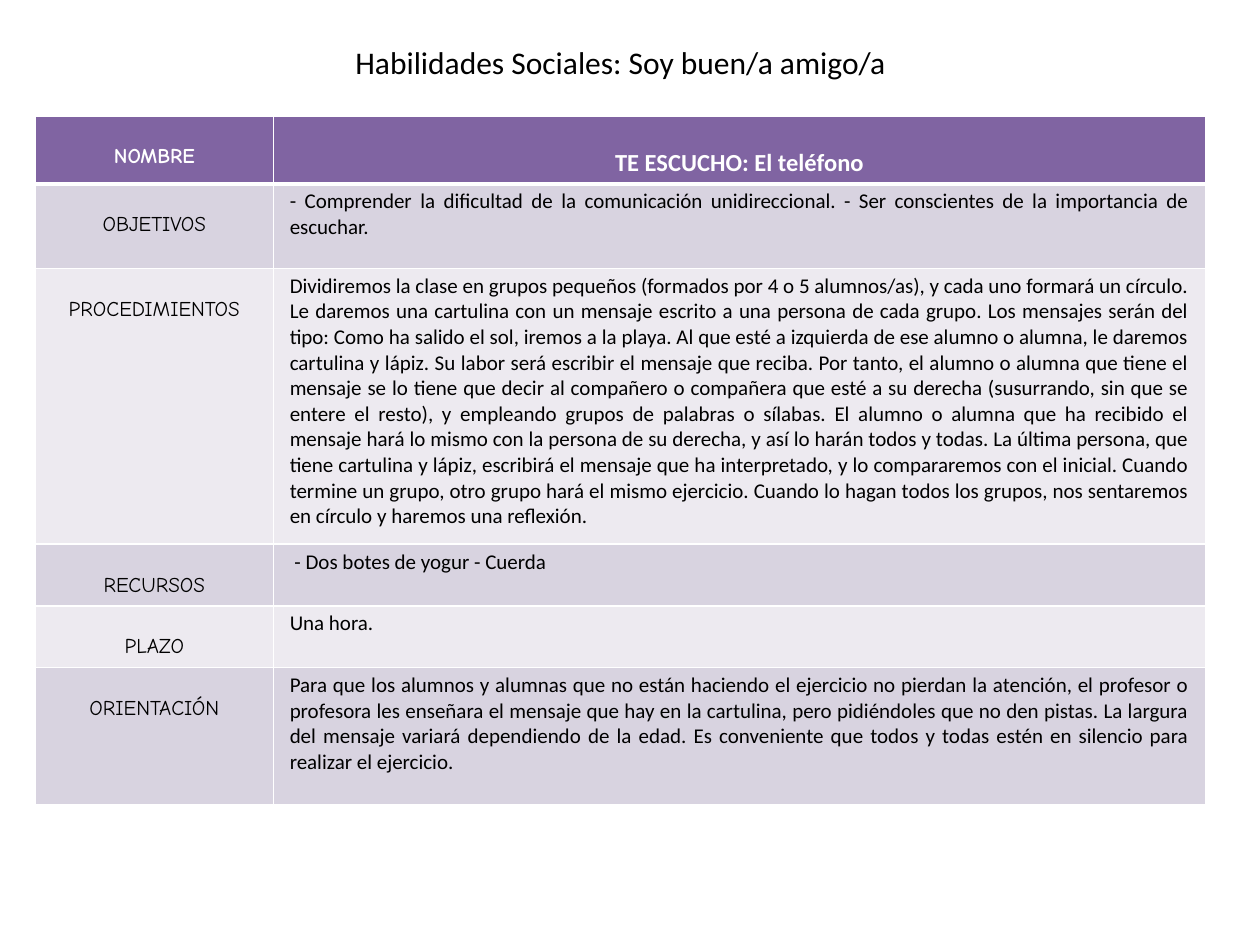
from lxml import etree
from pptx import Presentation
from pptx import util as u
from pptx.dml.color import RGBColor
from pptx.enum import text
from pptx.oxml import ns

COLORS = {"header": "8064A2", "odd": "D8D3E0", "even": "EDEAF0",
          "white": "FFFFFF", "black": "000000"}

COLUMN_WIDTHS = (1.89, 7.4)
ROW_HEIGHTS = (0.54, 0.67, 2.19, 0.49, 0.49, 1.09)

# Steps of the procedure, joined into one paragraph
PROCEDURE_STEPS = [
    "Dividiremos la clase en grupos pequeños (formados por 4 o 5 alumnos/as), "
    "y cada uno formará un círculo.",
    "Le daremos una cartulina con un mensaje escrito a una persona de cada grupo.",
    "Los mensajes serán del tipo: Como ha salido el sol, iremos a la playa.",
    "Al que esté a izquierda de ese alumno o alumna, le daremos cartulina y lápiz.",
    "Su labor será escribir el mensaje que reciba.",
    "Por tanto, el alumno o alumna que tiene el mensaje se lo tiene que decir al "
    "compañero o compañera que esté a su derecha (susurrando, sin que se entere el "
    "resto), y empleando grupos de palabras o sílabas.",
    "El alumno o alumna que ha recibido el mensaje hará lo mismo con la persona de "
    "su derecha, y así lo harán todos y todas.",
    "La última persona, que tiene cartulina y lápiz, escribirá el mensaje que ha "
    "interpretado, y lo compararemos con el inicial.",
    "Cuando termine un grupo, otro grupo hará el mismo ejercicio.",
    "Cuando lo hagan todos los grupos, nos sentaremos en círculo y haremos una "
    "reflexión.",
]

ACTIVITY = [
    ("NOMBRE", "TE ESCUCHO: El teléfono"),
    ("OBJETIVOS",
     "- Comprender la dificultad de la comunicación unidireccional. "
     "- Ser conscientes de la importancia de escuchar."),
    ("PROCEDIMIENTOS", " ".join(PROCEDURE_STEPS)),
    ("RECURSOS", " - Dos botes de yogur - Cuerda"),
    ("PLAZO", "Una hora."),
    ("ORIENTACIÓN",
     "Para que los alumnos y alumnas que no están haciendo el ejercicio no pierdan "
     "la atención, el profesor o profesora les enseñara el mensaje que hay en la "
     "cartulina, pero pidiéndoles que no den pistas. La largura del mensaje variará "
     "dependiendo de la edad. Es conveniente que todos y todas estén en silencio "
     "para realizar el ejercicio."),
]

# Text formats: font values, alignment and top margin of the cell
LABEL = {"font": {"name": "Comic Neue", "size": u.Pt(12)},
         "align": text.PP_ALIGN.CENTER, "top": 0.23}
NAME = {"font": {"name": "Calibri", "size": u.Pt(14)},
        "align": text.PP_ALIGN.CENTER, "top": 0.26}
DETAIL = {"font": {"name": "Calibri", "size": u.Pt(12)},
          "align": text.PP_ALIGN.JUSTIFY, "top": 0.04}


def rgb(color):
    return RGBColor.from_string(COLORS[color])


def set_values(target, values):
    for attribute, value in values.items():
        setattr(target, attribute, value)


def write(paragraph, wording, font_values, color):
    run = paragraph.add_run()
    run.text = wording
    set_values(run.font, font_values)
    run.font.color.rgb = rgb(color)


def add_borders(cell, widths):
    properties = cell._tc.get_or_add_tcPr()
    for side, width in widths.items():
        line = etree.SubElement(properties, ns.qn(f"a:ln{side}"), w=str(u.Pt(width)))
        fill = etree.SubElement(line, ns.qn("a:solidFill"))
        etree.SubElement(fill, ns.qn("a:srgbClr"), val=COLORS["white"])


def fill_cell(cell, wording, style, row):
    header = row == 0
    add_borders(cell, {"L": 1, "R": 1, "T": 3 if row == 1 else 1,
                       "B": 3 if header else 1})
    cell.fill.solid()
    cell.fill.fore_color.rgb = rgb("header" if header else "odd" if row % 2 else "even")
    set_values(cell, {"margin_left": u.Inches(0.13), "margin_right": u.Inches(0.13),
                      "margin_top": u.Inches(style["top"]),
                      "margin_bottom": u.Inches(0.04),
                      "vertical_anchor": text.MSO_ANCHOR.TOP})
    paragraph = cell.text_frame.paragraphs[0]
    paragraph.alignment = style["align"]
    write(paragraph, wording, {**style["font"], "bold": header},
          "white" if header else "black")


def add_title(slide, wording):
    title = slide.shapes.title
    set_values(title, {"left": u.Inches(2.72), "top": u.Inches(0.29),
                       "width": u.Inches(4.8), "height": u.Inches(0.4)})
    set_values(title.text_frame, {"word_wrap": True,
                                  "auto_size": text.MSO_AUTO_SIZE.NONE,
                                  "vertical_anchor": text.MSO_ANCHOR.TOP})
    paragraph = title.text_frame.paragraphs[0]
    paragraph.alignment = text.PP_ALIGN.LEFT
    write(paragraph, wording, {"name": "Calibri", "size": u.Pt(18)}, "black")


def add_activity_table(slide):
    table = slide.shapes.add_table(
        len(ROW_HEIGHTS), len(COLUMN_WIDTHS), u.Inches(0.28), u.Inches(0.92),
        u.Inches(sum(COLUMN_WIDTHS)), u.Inches(sum(ROW_HEIGHTS))).table
    for column, width in zip(table.columns, COLUMN_WIDTHS):
        column.width = u.Inches(width)
    for row, (height, (label, detail)) in enumerate(zip(ROW_HEIGHTS, ACTIVITY)):
        table.rows[row].height = u.Inches(height)
        fill_cell(table.cell(row, 0), label, LABEL, row)
        fill_cell(table.cell(row, 1), detail, DETAIL if row else NAME, row)


def main():
    presentation = Presentation()
    set_values(presentation, {"slide_width": u.Inches(10),
                              "slide_height": u.Inches(7.5)})
    # Title Only layout
    slide = presentation.slides.add_slide(presentation.slide_layouts[5])
    add_title(slide, "Habilidades Sociales: Soy buen/a amigo/a")
    add_activity_table(slide)
    presentation.save("out.pptx")


if __name__ == "__main__":
    main()
